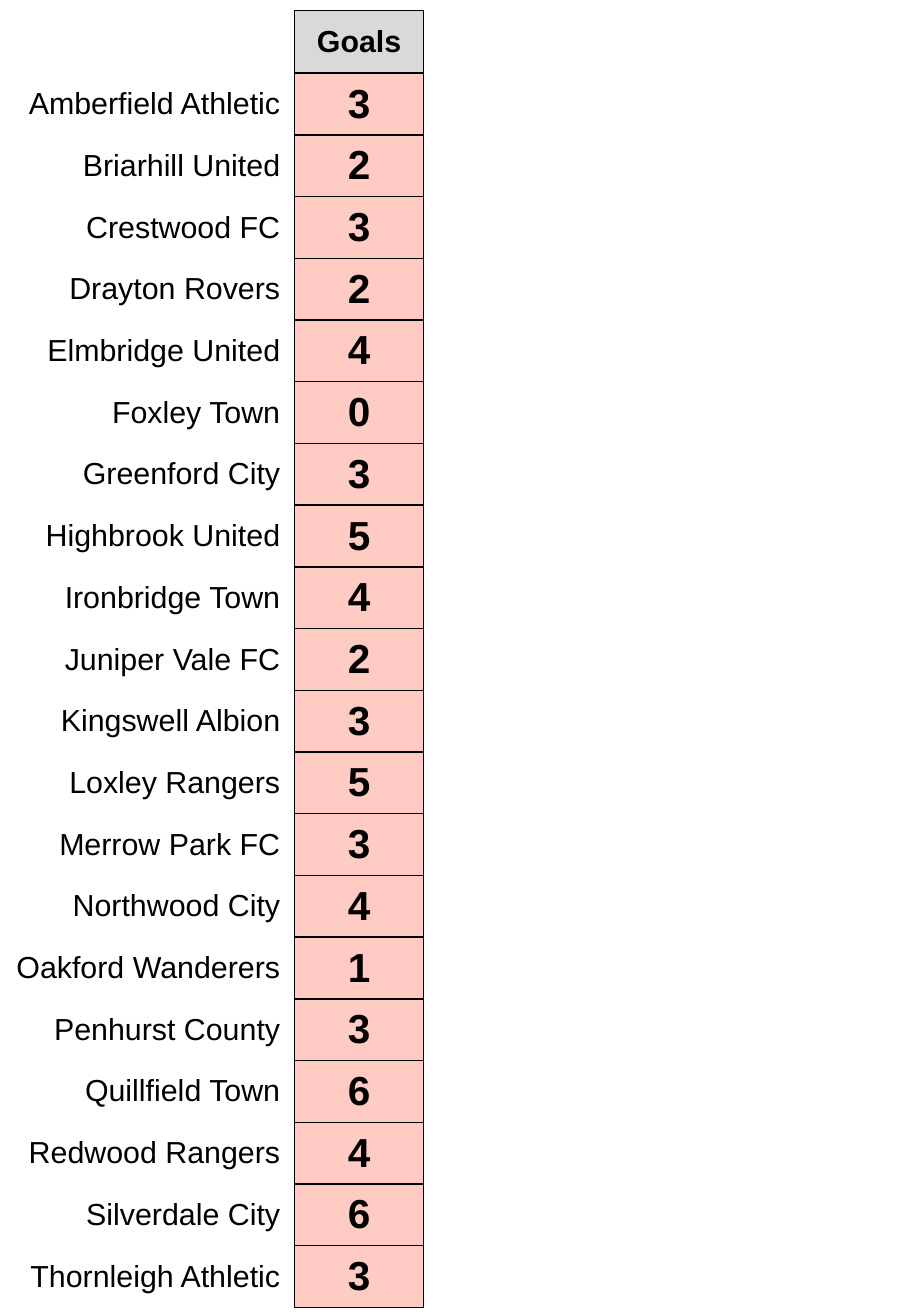
from lxml.etree import SubElement
from pptx import Presentation
from pptx.dml.color import RGBColor
from pptx.enum.text import MSO_ANCHOR, PP_ALIGN
from pptx.oxml import parse_xml
from pptx.oxml.ns import nsdecls, qn
from pptx.util import Cm, Pt

BLACK = RGBColor(0x00, 0x00, 0x00)
GREY = RGBColor(0xD9, 0xD9, 0xD9)
RED = RGBColor(0xFF, 0x26, 0x00)
PLAIN = "{2D5ABB26-0587-4C30-8999-92F81FD0307C}"  # table style without grid

HEAD = {"size": Pt(18), "bold": True}
NAME = {"size": Pt(18), "bold": False}
SCORE = {"size": Pt(24), "bold": True}

GOALS = {
    "Amberfield Athletic": 3,
    "Briarhill United": 2,
    "Crestwood FC": 3,
    "Drayton Rovers": 2,
    "Elmbridge United": 4,
    "Foxley Town": 0,
    "Greenford City": 3,
    "Highbrook United": 5,
    "Ironbridge Town": 4,
    "Juniper Vale FC": 2,
    "Kingswell Albion": 3,
    "Loxley Rangers": 5,
    "Merrow Park FC": 3,
    "Northwood City": 4,
    "Oakford Wanderers": 1,
    "Penhurst County": 3,
    "Quillfield Town": 6,
    "Redwood Rangers": 4,
    "Silverdale City": 6,
    "Thornleigh Athletic": 3,
}


class Sheet:
    def __init__(self, slide, font, ink):
        self.slide, self.font, self.ink = slide, font, ink

    def table(self, left, top, widths, heights):
        frame = self.slide.shapes.add_table(
            len(heights), len(widths), left, top, sum(widths), sum(heights))
        table = frame.table
        table.first_row = table.horz_banding = False
        table._tbl.tblPr.find(qn("a:tableStyleId")).text = PLAIN
        for col, width in zip(table.columns, widths):
            col.width = width
        for row, height in zip(table.rows, heights):
            row.height = height
        return table

    def text(self, cell, text, style, align, right=0):
        box = {"margin_left": 0, "margin_top": 0, "margin_right": right,
               "margin_bottom": 0, "vertical_anchor": MSO_ANCHOR.MIDDLE}
        for key, value in box.items():
            setattr(cell, key, value)
        para = cell.text_frame.paragraphs[0]
        para.alignment = align
        run = para.add_run()
        run.text = text
        for key, value in {"name": self.font, **style}.items():
            setattr(run.font, key, value)
        run.font.color.rgb = self.ink

    def fill(self, cell, color, alpha=100):
        """Fill the cell; alpha is its opacity in percent."""
        cell.fill.solid()
        cell.fill.fore_color.rgb = color
        if alpha < 100:
            tint = cell._tc.tcPr.find(".//" + qn("a:srgbClr"))
            SubElement(tint, qn("a:alpha")).set("val", str(alpha * 1000))

    def border(self, cell, width):
        """Draw all four sides, placed ahead of the fill as the schema asks."""
        for place, side in enumerate("LRTB"):
            line = parse_xml(
                f'<a:ln{side} {nsdecls("a")} w="{width}"><a:solidFill>'
                f'<a:srgbClr val="{self.ink}"/></a:solidFill></a:ln{side}>')
            cell._tc.get_or_add_tcPr().insert(place, line)


def main():
    deck = Presentation()
    deck.slide_width, deck.slide_height = Cm(19.05), Cm(27.51)
    sheet = Sheet(deck.slides.add_slide(deck.slide_layouts[6]), "Arial", BLACK)

    heights = [Cm(1.31)] + [Cm(1.29)] * len(GOALS)
    table = sheet.table(Cm(0.16), Cm(0.22), [Cm(6), Cm(2.7)], heights)

    head = table.cell(0, 1)
    sheet.text(head, "Goals", HEAD, PP_ALIGN.CENTER)
    sheet.fill(head, GREY)
    sheet.border(head, Pt(1))

    for row, (team, goals) in enumerate(GOALS.items(), 1):
        sheet.text(table.cell(row, 0), team, NAME, PP_ALIGN.RIGHT, Cm(0.3))
        score = table.cell(row, 1)
        sheet.text(score, str(goals), SCORE, PP_ALIGN.CENTER)
        sheet.fill(score, RED, 24)
        sheet.border(score, Pt(1))

    deck.save("out.pptx")


if __name__ == "__main__":
    main()
